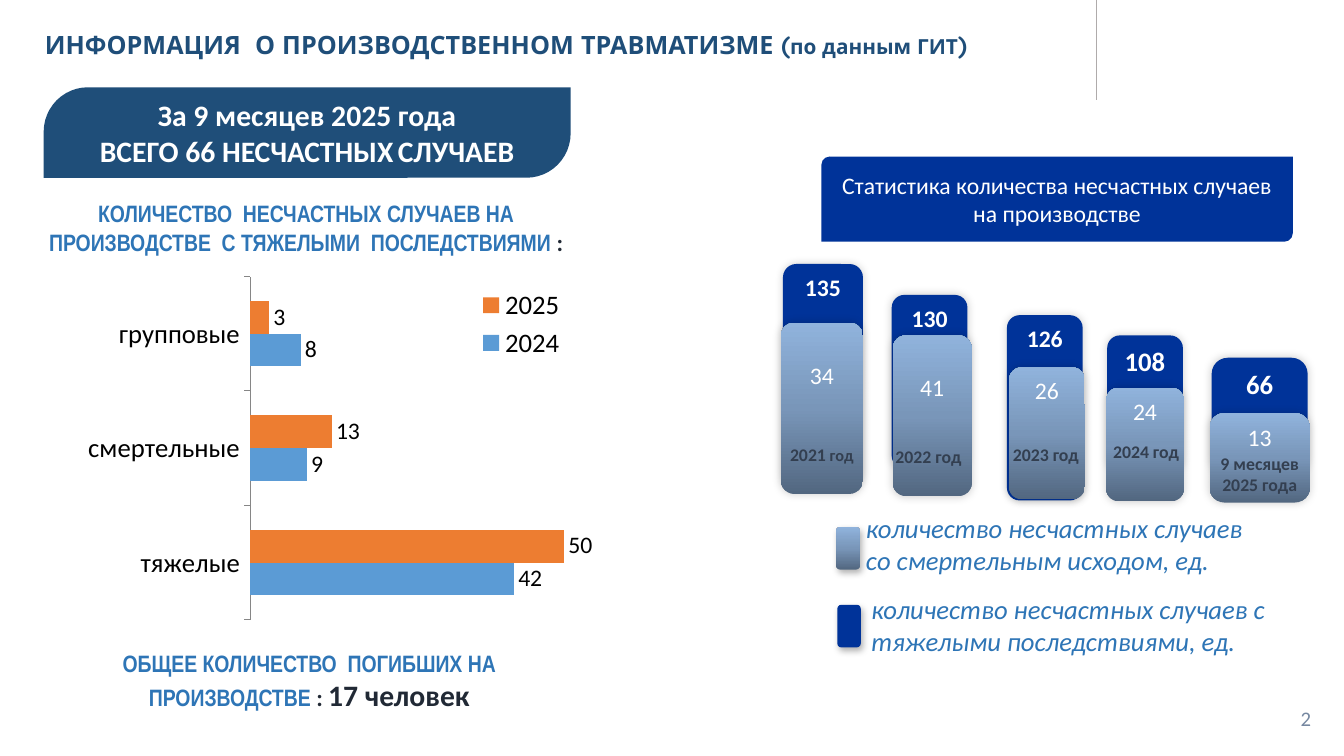
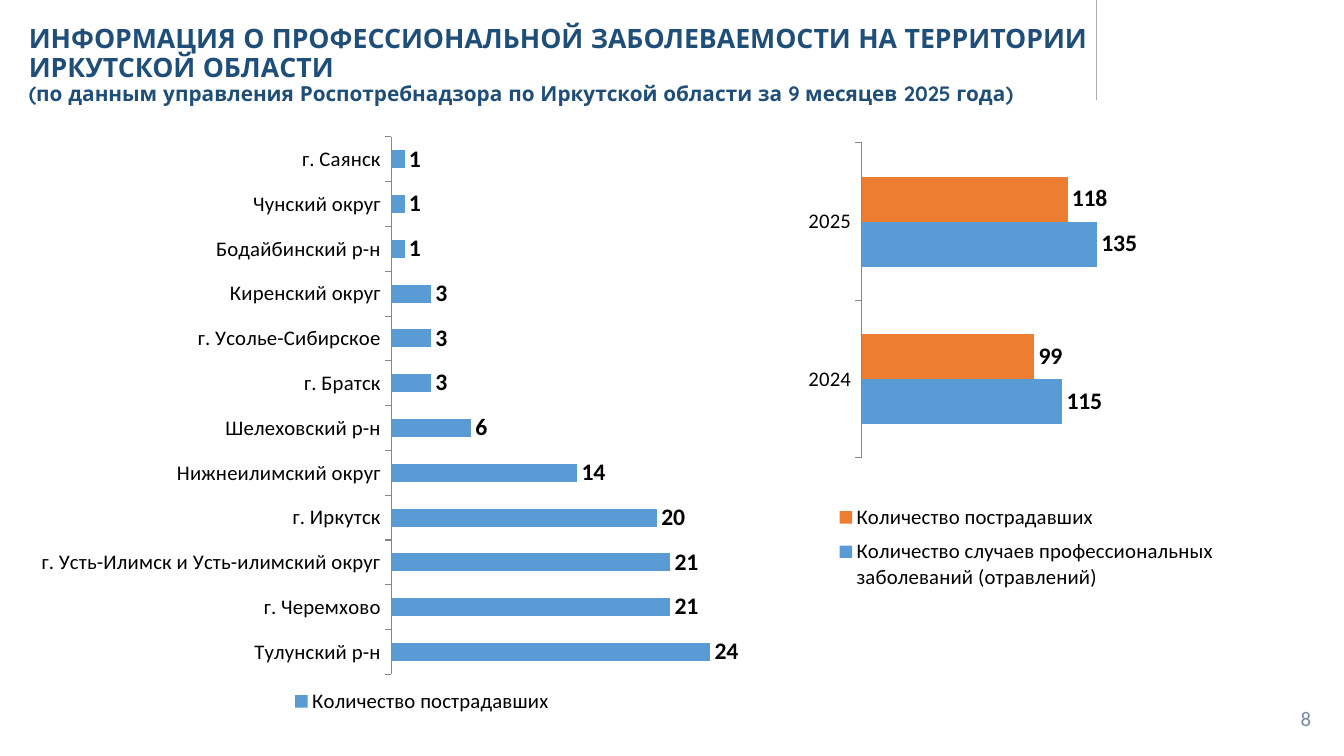
"""Build two slides on workplace injuries and occupational disease."""
from lxml.etree import SubElement
from pptx import Presentation
from pptx.chart.data import CategoryChartData as ChartData
from pptx.dml.color import RGBColor as RGB
from pptx.enum.chart import (XL_CHART_TYPE as ChartType, XL_LABEL_POSITION as LabelAt,
                             XL_LEGEND_POSITION as LegendAt, XL_TICK_MARK as Tick)
from pptx.enum.shapes import MSO_CONNECTOR as Connector, MSO_SHAPE as Shape
from pptx.enum.text import MSO_ANCHOR as Anchor, MSO_AUTO_SIZE as AutoSize, PP_ALIGN as Align
from pptx.oxml import parse_xml
from pptx.oxml.ns import nsdecls, qn
from pptx.util import Inches, Pt

TITLE_BLUE = RGB(0x1F, 0x4E, 0x79)
TEXT_BLUE = RGB(0x2E, 0x75, 0xB6)
DEEP_BLUE = RGB(0x00, 0x33, 0x99)
BAR_BLUE = RGB(0x5B, 0x9B, 0xD5)
ORANGE = RGB(0xED, 0x7D, 0x31)
INK = RGB(0x21, 0x29, 0x35)
SLATE = RGB(0x33, 0x3F, 0x50)
PAGE_GREY = RGB(0x76, 0x88, 0xA1)
RULE_GREY = RGB(0xAF, 0xAB, 0xAB)
AXIS_GREY = RGB(0x86, 0x86, 0x86)
WHITE = RGB(0xFF, 0xFF, 0xFF)
BLACK = RGB(0, 0, 0)
STEEL_STOPS = ((0, RGB(0x52, 0x67, 0x80)), (50, RGB(0x79, 0x96, 0xB9)), (100, RGB(0x90, 0xB3, 0xDC)))
BODY, NARROW, TITLE = "Calibri", "Arial Narrow", "Quicksand"

deck = Presentation()
deck.slide_width, deck.slide_height = Inches(12.6), Inches(7.09)
COLUMN, ROW = deck.slide_width / 126, deck.slide_height / 71


def grid(col, row, cols, rows):
    """Turn grid columns and rows into slide lengths."""
    return [round(n * unit) for n, unit in zip((col, row, cols, rows), (COLUMN, ROW) * 2)]


def write(shape, paragraphs, align=Align.CENTER, anchor=Anchor.TOP, margins=(0, 0), spacing=None):
    """Fill a shape with paragraphs of (text, size, colour, style, font) runs."""
    frame = shape.text_frame
    frame.word_wrap, frame.auto_size, frame.vertical_anchor = True, AutoSize.NONE, anchor
    frame.margin_left = frame.margin_right = Inches(margins[0])
    frame.margin_top, frame.margin_bottom = Inches(margins[1]), 0
    for index, runs in enumerate(paragraphs):
        paragraph = frame.add_paragraph() if index else frame.paragraphs[0]
        paragraph.alignment, paragraph.line_spacing = align, spacing
        for text, size, colour, style, font in runs:
            run = paragraph.add_run()
            run.text = text
            run.font.size, run.font.name, run.font.color.rgb = Pt(size), font, colour
            run.font.bold, run.font.italic = "b" in style, "i" in style


pages = (
    ("2", (3.2, 2.6, 101.6, 9.7), [
        [("ИНФОРМАЦИЯ  О ПРОИЗВОДСТВЕННОМ ТРАВМАТИЗМЕ (", 17, TITLE_BLUE, "b", TITLE),
         ("по данным ГИТ", 14, TITLE_BLUE, "b", TITLE),
         (")", 17, TITLE_BLUE, "b", TITLE)]]),
    ("8", (1.7, 1.9, 102.1, 8), [
        [("ИНФОРМАЦИЯ О ПРОФЕССИОНАЛЬНОЙ ЗАБОЛЕВАЕМОСТИ НА ТЕРРИТОРИИ ИРКУТСКОЙ ОБЛАСТИ",
          18, TITLE_BLUE, "b", TITLE)],
        [("(по данным управления Роспотребнадзора по Иркутской области за 9 месяцев 2025 года)",
          14, TITLE_BLUE, "b", TITLE)]]),
)
for number, place, heading in pages:
    slide = deck.slides.add_slide(deck.slide_layouts[5])
    title = slide.shapes.title
    title.left, title.top, title.width, title.height = grid(*place)
    write(title, heading, Align.LEFT, margins=(0.1, 0.05), spacing=0.9)
    x, top, _, length = grid(102.8, 0, 0, 9.4)
    rule = slide.shapes.add_connector(Connector.STRAIGHT, x, top, x, length)
    rule.line.color.rgb, rule.line.width = RULE_GREY, Pt(0.75)
    SubElement(rule._element.spPr, qn("a:effectLst"))
    page_number = slide.shapes.add_textbox(*grid(94.5, 65.8, 29.4, 3.8))
    write(page_number, [[(number, 14, PAGE_GREY, "", BODY)]], Align.RIGHT, margins=(0.1, 0.05))

injuries, diseases = deck.slides

banners = (
    ((4.1, 8.2, 49.4, 8.5), TITLE_BLUE, 0.49, [
        [("За 9 месяцев 2025 года", 20, WHITE, "b", BODY)],
        [("ВСЕГО 66 НЕСЧАСТНЫХ", 20, WHITE, "b", BODY), (" ", 12, WHITE, "b", BODY),
         ("СЛУЧАЕВ", 20, WHITE, "b", BODY)]]),
    ((77, 14.7, 44.2, 8), DEEP_BLUE, 0.1, [
        [("Статистика количества несчастных случаев", 16, WHITE, "", BODY)],
        [("на производстве", 16, WHITE, "", BODY)]]),
)
for place, colour, corner, lines in banners:
    banner = injuries.shapes.add_shape(Shape.ROUND_2_DIAG_RECTANGLE, *grid(*place))
    banner.adjustments[0], banner.adjustments[1] = corner, 0
    banner.shadow.inherit = False
    banner.fill.solid()
    banner.fill.fore_color.rgb = colour
    banner.line.fill.background()
    write(banner, lines, anchor=Anchor.MIDDLE)

captions = (
    ((3.1, 18.6, 51.2, 5.5), [
        ("КОЛИЧЕСТВО  НЕСЧАСТНЫХ СЛУЧАЕВ НА ПРОИЗВОДСТВЕ  С ТЯЖЕЛЫМИ  ПОСЛЕДСТВИЯМИ ",
         16, TEXT_BLUE, "b", NARROW),
        (":", 16, INK, "b", BODY)]),
    ((3.4, 60.8, 51.2, 6.2), [
        ("ОБЩЕЕ КОЛИЧЕСТВО  ПОГИБШИХ НА ПРОИЗВОДСТВЕ ", 16, TEXT_BLUE, "b", NARROW),
        (": ", 16, INK, "b", BODY),
        ("17 человек", 20, INK, "b", BODY)]),
)
for place, runs in captions:
    write(injuries.shapes.add_textbox(*grid(*place)), [runs], margins=(0, 0.01))

TILE_GLOW, KEY_SHADOW = (20, 6, 0, 225), (30, 4.5, 2.6, 53)
tiles = (
    ((73.4, 24.8, 7.5, 20.8), "135", 16, True, 0.05, TILE_GLOW),
    ((73.2, 30.3, 7.7, 16.1), "34", 16, False, 0.32, TILE_GLOW),
    ((83.6, 27.7, 7.1, 16.3), "130", 16, True, 0.05, TILE_GLOW),
    ((83.7, 31.5, 7.4, 15.1), "41", 16, False, 0.32, TILE_GLOW),
    ((94.4, 29.6, 7.1, 17.4), "126", 16, True, 0.05, TILE_GLOW),
    ((94.6, 34.5, 7.1, 12.4), "26", 16, False, 0.05, TILE_GLOW),
    ((103.8, 31.5, 7.1, 12.8), "108", 18, True, 0.05, TILE_GLOW),
    ((103.7, 36.4, 7.3, 10.7), "24", 16, False, 0.05, TILE_GLOW),
    ((113.6, 33.6, 9, 10.9), "66", 18, True, 0.05, TILE_GLOW),
    ((113.4, 38.8, 9.4, 8.4), "13", 16, False, 0.05, TILE_GLOW),
    ((78.4, 49.5, 2.2, 4), "", 16, False, 0, KEY_SHADOW),
    ((78.5, 56.8, 2.2, 4), "", 16, True, 0, KEY_SHADOW),
)
for place, count, size, severe, top_margin, (alpha, blur, distance, angle) in tiles:
    tile = injuries.shapes.add_shape(Shape.ROUNDED_RECTANGLE, *grid(*place))
    if severe:
        tile.fill.solid()
        tile.fill.fore_color.rgb = DEEP_BLUE
    else:
        stops = "".join(f'<a:gs pos="{share * 1000}"><a:srgbClr val="{colour}"/></a:gs>'
                        for share, colour in STEEL_STOPS)
        tile._element.spPr.append(parse_xml(
            f'<a:gradFill {nsdecls("a")}><a:gsLst>{stops}</a:gsLst>'
            '<a:lin ang="16200000" scaled="0"/></a:gradFill>'))
    tile.line.fill.background()
    tile._element.spPr.append(parse_xml(
        f'<a:effectLst {nsdecls("a")}><a:outerShdw blurRad="{Pt(blur)}" dist="{Pt(distance)}" '
        f'dir="{angle * 60000}"><a:srgbClr val="000000"><a:alpha val="{alpha * 1000}"/>'
        '</a:srgbClr></a:outerShdw></a:effectLst>'))
    if count:
        write(tile, [[(count, size, WHITE, "b" if severe else "", BODY)]], margins=(0.04, top_margin))

years = (
    ((73.7, 41.3, 6.7, 4), (("2021", 12), (" год", 11))),
    ((83.7, 41.5, 6.7, 4.1), (("2022 год", 12),)),
    ((94.7, 41.3, 6.7, 4.1), (("2023 год", 12),)),
    ((104.1, 41, 6.7, 4.1), (("2024 год", 12),)),
    ((113.8, 42.1, 8.6, 4.1), (("9 месяцев 2025 года", 12),)),
)
for place, pieces in years:
    write(injuries.shapes.add_textbox(*grid(*place)),
          [[(text, size, SLATE, "b", BODY) for text, size in pieces]], margins=(0, 0.04))

keys = (
    ((80.2, 47.6, 39.7, 6.9), "количество несчастных случаев со смертельным исходом, ед."),
    ((80.7, 55.3, 39.7, 6.8), "количество несчастных случаев с тяжелыми последствиями, ед."),
)
for place, meaning in keys:
    write(injuries.shapes.add_textbox(*grid(*place)), [[(meaning, 18, TEXT_BLUE, "i", BODY)]],
          Align.LEFT, Anchor.MIDDLE, (0.1, 0))

districts = ("Тулунский р-н", "г. Черемхово", "г. Усть-Илимск и Усть-илимский округ", "г. Иркутск",
             "Нижнеилимский округ", "Шелеховский р-н", "г. Братск", "г. Усолье-Сибирское",
             "Киренский округ", "Бодайбинский р-н", "Чунский округ", "г. Саянск")
charts = (
    (injuries, (3.6, 24.6, 55.2, 34.3), ("тяжелые", "смертельные", "групповые"),
     (("2024", (42, 9, 8), BAR_BLUE), ("2025", (50, 13, 3), ORANGE)),
     60, 18, False, LegendAt.RIGHT, (0.36, 0.04, 0.64, 0.94), (0.72, 0.06, 0.2, 0.22)),
    (diseases, (2.9, 12.3, 71.9, 56.1), districts,
     (("Количество пострадавших", (24, 21, 21, 20, 14, 6, 3, 3, 3, 1, 1, 1), BAR_BLUE),),
     30, 14, True, LegendAt.RIGHT, (0.47, 0.01, 0.52, 0.9), (0.31, 0.93, 0.4, 0.05)),
    (diseases, (73.5, 12.4, 42.9, 51), ("2024", "2025"),
     (("Количество случаев профессиональных заболеваний (отравлений)", (115, 135), BAR_BLUE),
      ("Количество пострадавших", (99, 118), ORANGE)),
     160, 14, True, LegendAt.BOTTOM, (0.17, 0.02, 0.61, 0.58), (0.1, 0.67, 0.86, 0.19)),
)
for slide, place, groups, rows, top_value, size, bold, legend_at, plot_box, legend_box in charts:
    figures = ChartData()
    figures.categories = groups
    for name, values, _ in rows:
        figures.add_series(name, values)
    chart = slide.shapes.add_chart(ChartType.BAR_CLUSTERED, *grid(*place), figures).chart
    chart.has_title, chart.has_legend = False, True
    chart.legend.position, chart.legend.include_in_layout = legend_at, False
    scale, axis, plot = chart.value_axis, chart.category_axis, chart.plots[0]
    scale.minimum_scale, scale.maximum_scale = 0, top_value
    scale.has_major_gridlines, scale.visible = False, False
    axis.major_tick_mark = Tick.OUTSIDE
    axis.format.line.color.rgb = AXIS_GREY
    plot.gap_width, plot.overlap, plot.vary_by_categories = 150, 0, False
    plot.has_data_labels = True
    labels = plot.data_labels
    labels.show_value, labels.position = True, LabelAt.OUTSIDE_END
    for series, (_, _, colour) in zip(plot.series, rows):
        series.format.fill.solid()
        series.format.fill.fore_color.rgb = colour
    for font, points, heavy in ((chart.font, 18, False), (axis.tick_labels.font, size, False),
                                (chart.legend.font, size, False), (labels.font, 16, bold)):
        font.name, font.size, font.bold, font.color.rgb = BODY, Pt(points), heavy, BLACK
    for part, index, target, shares in ((chart._chartSpace.chart.plotArea, 0, "inner", plot_box),
                                        (chart.legend._element, 1, None, legend_box)):
        for automatic in part.findall(qn("c:layout")):
            part.remove(automatic)
        inner = f'<c:layoutTarget val="{target}"/>' if target else ""
        modes = '<c:xMode val="edge"/><c:yMode val="edge"/>'
        sizes = "".join(f'<c:{side} val="{share}"/>' for side, share in zip("xywh", shares))
        part.insert(index, parse_xml(f'<c:layout {nsdecls("c")}><c:manualLayout>{inner}{modes}{sizes}'
                                     '</c:manualLayout></c:layout>'))

deck.save("out.pptx")
